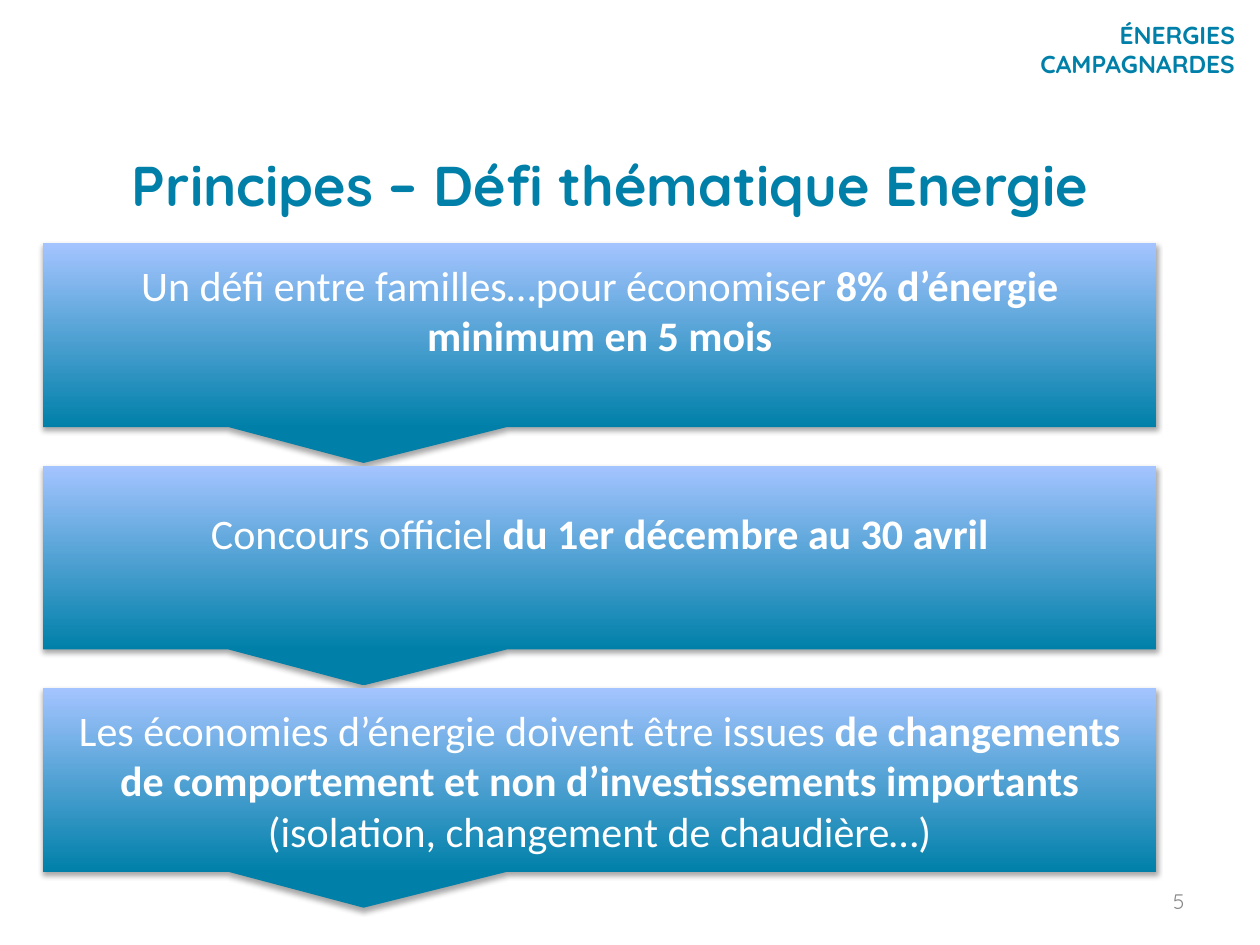
"""Build the slide presenting the principles of the energy challenge."""
import lxml.etree
import pptx
import pptx.dml.color
import pptx.enum.shapes
import pptx.enum.text
import pptx.oxml.ns
import pptx.util

Inches = pptx.util.Inches
Pt = pptx.util.Pt
RGBColor = pptx.dml.color.RGBColor
Align = pptx.enum.text.PP_ALIGN
Anchor = pptx.enum.text.MSO_ANCHOR

BLUE = RGBColor(0x00, 0x80, 0xA9)
LIGHT_BLUE = RGBColor(0xA4, 0xC4, 0xFF)
GREY = RGBColor(0x89, 0x89, 0x89)
WHITE = RGBColor(0xFF, 0xFF, 0xFF)

TITLE = "Principes – Défi thématique Energie"
HEADER = "ÉNERGIES\vCAMPAGNARDES"
PAGE_NUMBER = "5"
CALLOUTS = [
    (0.45, [("Un défi entre familles…pour économiser ", False),
            ("8% d’énergie minimum en 5 mois", True)]),
    (0.45, [("Concours officiel ", False),
            ("du 1er décembre au 30 avril", True)]),
    (0.05, [("Les économies d’énergie doivent être issues ", False),
            ("de changements de comportement et non d’investissements importants ", True),
            ("(isolation, changement de chaudière…)", False)]),
]
CALLOUT_LEFT, CALLOUT_TOP, CALLOUT_WIDTH, CALLOUT_HEIGHT = 0.34, 1.93, 8.84, 1.46
CALLOUT_PITCH = 1.765


def format_run(run, name, size, color, bold=False):
    run.font.name = name
    run.font.size = Pt(size)
    run.font.color.rgb = color
    run.font.bold = bold


def write_line(shape, box, text, align, anchor, size, color, bold):
    shape.left, shape.top, shape.width, shape.height = map(Inches, box)
    frame = shape.text_frame
    frame.word_wrap = True
    frame.vertical_anchor = anchor
    frame.text = text
    paragraph = frame.paragraphs[0]
    paragraph.alignment = align
    for run in paragraph.runs:
        format_run(run, "Quicksand", size, color, bold)


def add_shadow(shape):
    shape.shadow.inherit = False
    qn = pptx.oxml.ns.qn
    effects = shape._element.spPr.find(qn("a:effectLst"))
    shadow = lxml.etree.SubElement(
        effects, qn("a:outerShdw"), blurRad=str(Pt(3.1)), dist=str(Pt(1.8)),
        dir="5400000", rotWithShape="0")
    color = lxml.etree.SubElement(shadow, qn("a:srgbClr"), val="000000")
    lxml.etree.SubElement(color, qn("a:alpha"), val="35000")


def add_callout(slide, top, bottom_margin, parts):
    shape = slide.shapes.add_shape(
        pptx.enum.shapes.MSO_SHAPE.RECTANGULAR_CALLOUT, Inches(CALLOUT_LEFT),
        Inches(top), Inches(CALLOUT_WIDTH), Inches(CALLOUT_HEIGHT))
    shape.adjustments[0] = -0.212
    shape.adjustments[1] = 0.695
    shape.fill.gradient()
    shape.fill.gradient_angle = 90
    for stop, color in zip(shape.fill.gradient_stops, (BLUE, LIGHT_BLUE)):
        stop.color.rgb = color
    shape.line.fill.background()
    add_shadow(shape)
    frame = shape.text_frame
    frame.word_wrap = True
    frame.vertical_anchor = Anchor.MIDDLE
    frame.margin_bottom = Inches(bottom_margin)
    paragraph = frame.paragraphs[0]
    paragraph.alignment = Align.CENTER
    for text, bold in parts:
        run = paragraph.add_run()
        run.text = text
        format_run(run, "Calibri", 24, WHITE, bold)


def main():
    presentation = pptx.Presentation()
    presentation.slide_width = Inches(10)
    presentation.slide_height = Inches(7.5)
    slide = presentation.slides.add_slide(presentation.slide_layouts[5])
    write_line(slide.shapes.title, (0.5, 1.05, 8.69, 0.83), TITLE,
               Align.CENTER, Anchor.MIDDLE, 32, BLUE, True)
    for box, text, anchor, size, color, bold in (
            ((7.31, 0.11, 2.59, 0.57), HEADER, Anchor.TOP, 14, BLUE, True),
            ((7.17, 6.95, 2.33, 0.4), PAGE_NUMBER, Anchor.MIDDLE, 12, GREY, False)):
        text_box = slide.shapes.add_textbox(0, 0, 0, 0)
        write_line(text_box, box, text, Align.RIGHT, anchor, size, color, bold)
    for index, (bottom_margin, parts) in enumerate(CALLOUTS):
        add_callout(slide, CALLOUT_TOP + index * CALLOUT_PITCH, bottom_margin, parts)
    presentation.save("out.pptx")


if __name__ == "__main__":
    main()
